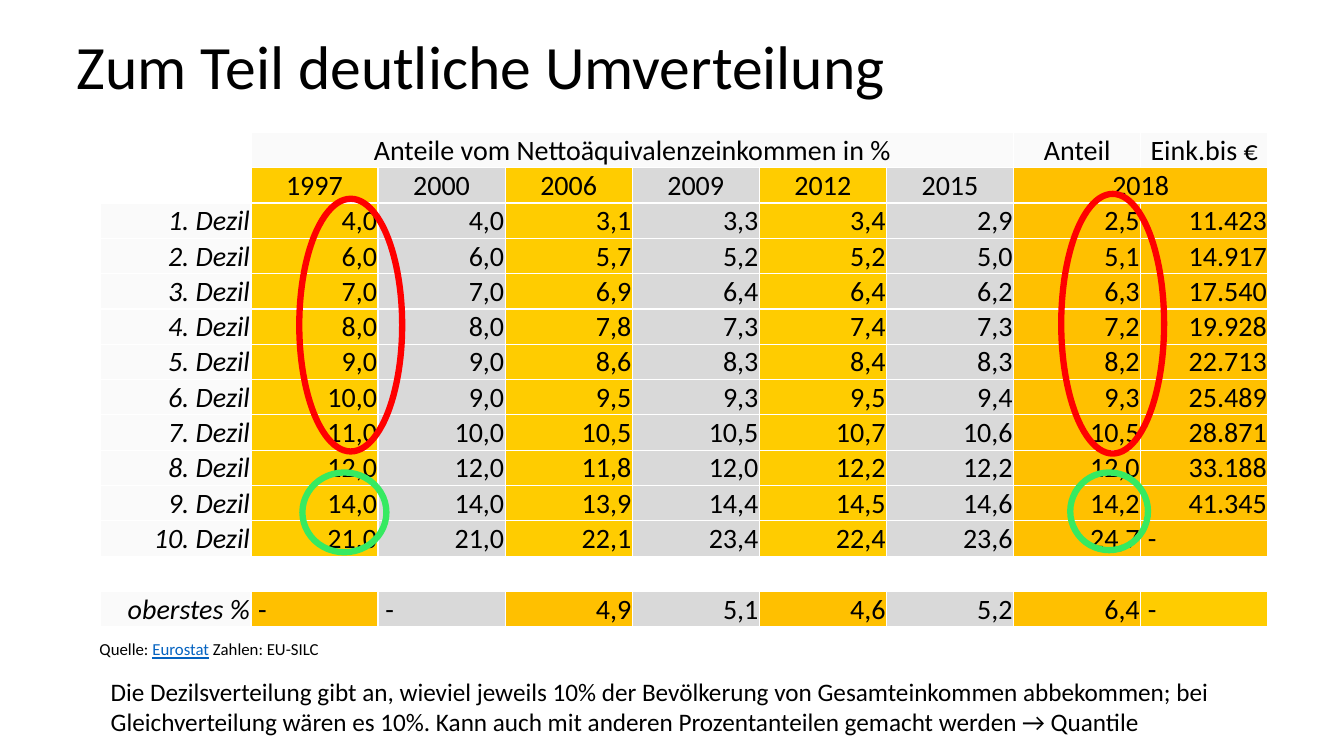
"""Build the slide on income shares by decile."""
from lxml.etree import SubElement
from pptx import Presentation
from pptx.dml.color import RGBColor
from pptx.enum.shapes import MSO_SHAPE
from pptx.enum.text import MSO_ANCHOR, PP_ALIGN
from pptx.oxml.ns import qn
from pptx.util import Pt

TITLE = "Zum Teil deutliche Umverteilung"
HEAD = ["", "Anteile vom Nettoäquivalenzeinkommen in %", "", "", "", "", "", "Anteil", "Eink.bis €"]
YEARS = ["", "1997", "2000", "2006", "2009", "2012", "2015", "2018", ""]
SHARES = [
    ["4,0", "4,0", "3,1", "3,3", "3,4", "2,9", "2,5", "11.423"],
    ["6,0", "6,0", "5,7", "5,2", "5,2", "5,0", "5,1", "14.917"],
    ["7,0", "7,0", "6,9", "6,4", "6,4", "6,2", "6,3", "17.540"],
    ["8,0", "8,0", "7,8", "7,3", "7,4", "7,3", "7,2", "19.928"],
    ["9,0", "9,0", "8,6", "8,3", "8,4", "8,3", "8,2", "22.713"],
    ["10,0", "9,0", "9,5", "9,3", "9,5", "9,4", "9,3", "25.489"],
    ["11,0", "10,0", "10,5", "10,5", "10,7", "10,6", "10,5", "28.871"],
    ["12,0", "12,0", "11,8", "12,0", "12,2", "12,2", "12,0", "33.188"],
    ["14,0", "14,0", "13,9", "14,4", "14,5", "14,6", "14,2", "41.345"],
    ["21,0", "21,0", "22,1", "23,4", "22,4", "23,6", "24,7", " -"],
]
TOP = ["oberstes %", " -", " -", "4,9", "5,1", "4,6", "5,2", "6,4", " -"]
SOURCE = [("Quelle: ", "000000", False), ("Eurostat", "0563C1", True),
          (" Zahlen: EU-SILC", "000000", False)]
NOTE = [("Die Dezilsverteilung gibt an, wieviel jeweils 10% der Bevölkerung von "
         "Gesamteinkommen abbekommen; bei Gleichverteilung wären es 10%. Kann auch mit "
         "anderen Prozentanteilen gemacht werden → Quantile", "000000", False)]
NOTES = [(SOURCE, 12, (64, 453, 230.5, 21.75)), (NOTE, 18, (72, 479.5, 834, 51))]
RINGS = [("FF0000", (213.75, 142, 73.5, 180.5)), ("FF0000", (758, 138.5, 73.5, 185.5)),
         ("36EA61", (216, 337.5, 60, 57)), ("36EA61", (764.5, 337.5, 55.5, 55.5))]

PALE, GOLD, GREY, AMBER = "FAFAFA", "FFCC00", "D9D9D9", "FFC000"
BODY = [PALE] + [GOLD, GREY] * 3 + [AMBER] * 2
LAST = [PALE] + [AMBER, GREY] * 3 + [AMBER, GOLD]
ROWS = [HEAD, YEARS]
ROWS += [[f"{n}. Dezil"] + row for n, row in enumerate(SHARES, 1)]
ROWS += [[""] * 9, TOP]
FILLS = [[PALE] * 9] + [BODY] * 12 + [LAST]
PAD = {"margin_left": Pt(0.7), "margin_right": Pt(0.7), "margin_top": Pt(0.7),
       "margin_bottom": Pt(0), "vertical_anchor": MSO_ANCHOR.BOTTOM}
LABEL, YEAR, ROW = 107.25, 90.8, 25.25


def color(text):
    """Turn a hex string into a colour."""
    return RGBColor.from_string(text)


def apply(item, values):
    """Set every value of the dict on the item."""
    for name, value in values.items():
        setattr(item, name, value)


def write(para, text, size, tint="000000", **more):
    """Add one formatted run to a paragraph."""
    run = para.add_run()
    run.text = text
    apply(run.font, {"name": "Calibri", "size": Pt(size), **more})
    run.font.color.rgb = color(tint)


def border(cell):
    """Draw white lines on all sides of a cell."""
    props = cell._tc.get_or_add_tcPr()
    for side in ("a:lnL", "a:lnR", "a:lnT", "a:lnB"):
        line = SubElement(props, qn(side), w=str(Pt(1)))
        fill = SubElement(line, qn("a:solidFill"))
        SubElement(fill, qn("a:srgbClr"), val="FFFFFF")


def fill_cell(cell, text, row, col):
    """Format one table cell and write its text."""
    apply(cell, PAD)
    border(cell)
    if not text:
        cell.fill.background()
        return
    cell.fill.solid()
    cell.fill.fore_color.rgb = color(FILLS[row][col])
    para = cell.text_frame.paragraphs[0]
    if row < 2:
        para.alignment = PP_ALIGN.CENTER
    elif text != " -":
        para.alignment = PP_ALIGN.RIGHT
    write(para, text, 20, italic=col == 0)


def add_grid(slide):
    """Add the table of shares."""
    box = map(Pt, (72, 94.5, LABEL + 8 * YEAR, ROW * len(ROWS)))
    grid = slide.shapes.add_table(len(ROWS), 9, *box).table
    apply(grid, {"first_row": False, "horz_banding": False})
    for col, column in enumerate(grid.columns):
        column.width = Pt(YEAR if col else LABEL)
    for row, line in enumerate(ROWS):
        grid.rows[row].height = Pt(ROW)
        for col, text in enumerate(line):
            fill_cell(grid.cell(row, col), text, row, col)
    grid.cell(0, 1).merge(grid.cell(0, 6))
    grid.cell(1, 7).merge(grid.cell(1, 8))


def main():
    """Put the slide together and save it."""
    deck = Presentation()
    apply(deck, {"slide_width": Pt(960), "slide_height": Pt(540)})
    slide = deck.slides.add_slide(deck.slide_layouts[5])
    title = slide.shapes.title
    apply(title, {"left": Pt(47.5), "top": Pt(4.5), "width": Pt(864), "height": Pt(90)})
    title.text_frame.vertical_anchor = MSO_ANCHOR.MIDDLE
    para = title.text_frame.paragraphs[0]
    apply(para, {"alignment": PP_ALIGN.LEFT, "line_spacing": 0.9})
    write(para, TITLE, 44)
    add_grid(slide)
    for tint, box in RINGS:
        ring = slide.shapes.add_shape(MSO_SHAPE.OVAL, *map(Pt, box))
        ring.shadow.inherit = False
        ring.fill.background()
        ring.line.color.rgb = color(tint)
        ring.line.width = Pt(4.5)
    for runs, size, box in NOTES:
        frame = slide.shapes.add_textbox(*map(Pt, box)).text_frame
        frame.word_wrap = True
        for text, tint, under in runs:
            write(frame.paragraphs[0], text, size, tint, underline=under)
    deck.save("out.pptx")


if __name__ == "__main__":
    main()
